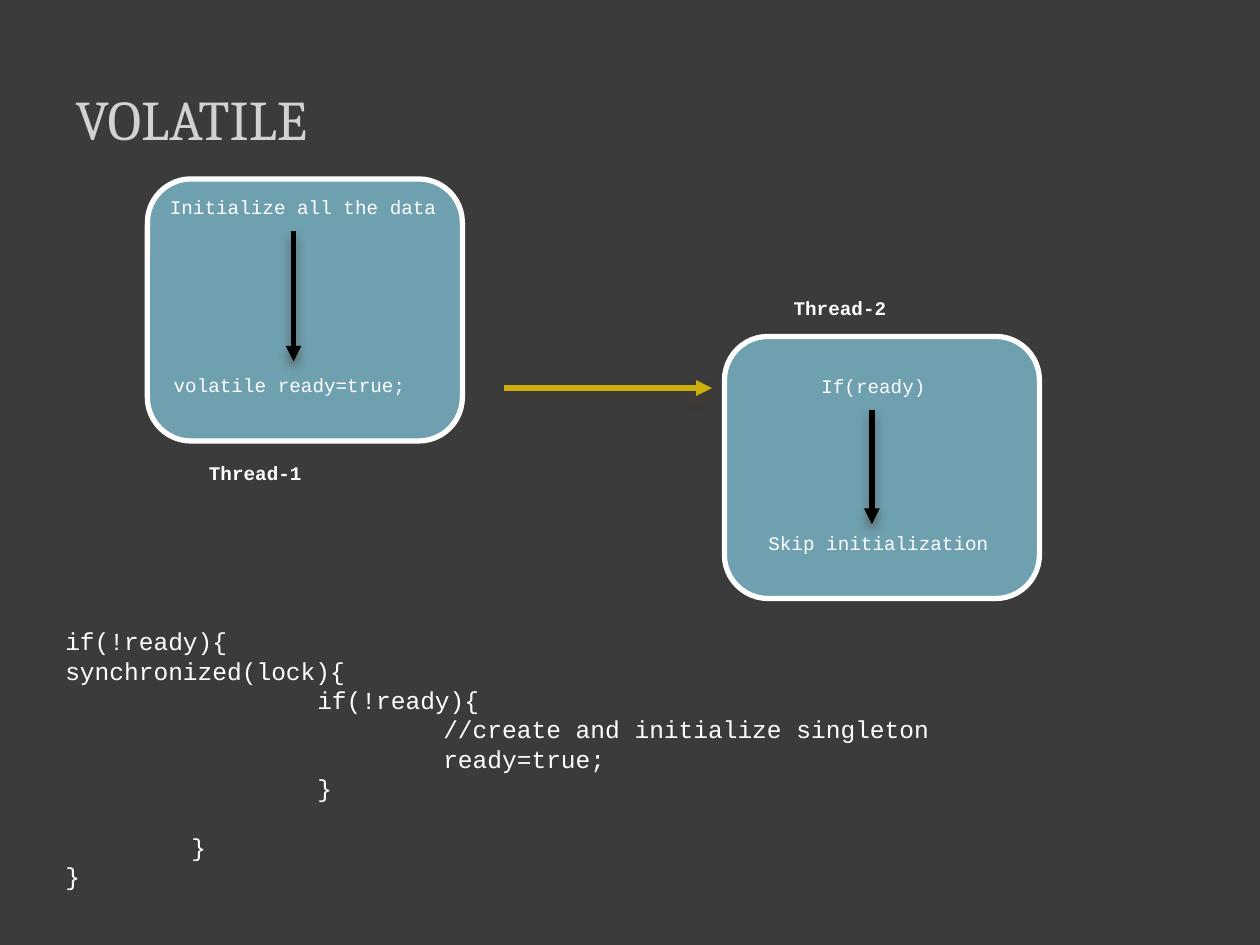
"""Build the slide on publishing data between threads with a volatile flag."""
from lxml import etree
from pptx import Presentation
from pptx import util as u
from pptx.dml.color import RGBColor
from pptx.enum import shapes, text
from pptx.oxml import parse_xml
from pptx.oxml.ns import nsdecls, qn

COLORS = {
    "background": "3B3B3B",
    "thread": "6EA0B0",
    "white": "FFFFFF",
    "title": "D4D2D0",
    "signal": "CCAF0A",
    "step": "000000",
    "shadow": "4E3B30",
}
CODE = [
    "if(!ready){",
    "synchronized(lock){",
    "\t\tif(!ready){",
    "\t\t\t//create and initialize singleton",
    "\t\t\tready=true;",
    "\t\t}",
    "\t}",
    "}",
]
LABELS = [
    ("volatile ready=true;", (1.28, 2.91, 3.1, 0.33), False),
    ("If(ready)", (6.42, 2.92, 1.47, 0.33), False),
    ("Initialize all the data", (1.25, 1.5, 2.34, 0.57), False),
    ("Skip initialization", (6, 4.17, 2.34, 0.57), False),
    ("Thread-1", (1.56, 3.61, 1.31, 0.37), True),
    ("Thread-2", (6.2, 2.3, 1.31, 0.37), True),
]


def rgb(name):
    return RGBColor.from_string(COLORS[name])


def inches(values):
    return [u.Inches(value) for value in values]


def write(paragraph, words, size=11, font="Courier New", color="white",
          bold=False, after=0, before=0):
    paragraph.alignment = text.PP_ALIGN.LEFT
    paragraph.space_before = u.Pt(before)
    paragraph.space_after = u.Pt(after)
    run = paragraph.add_run()
    run.text = words
    run.font.size = u.Pt(size)
    run.font.name = font
    run.font.bold = bold
    run.font.color.rgb = rgb(color)


def add_title(slide, words):
    title = slide.shapes.title
    title.left, title.top, title.width, title.height = inches((0.5, 0.25, 9, 1.37))
    title.text_frame.vertical_anchor = text.MSO_ANCHOR.MIDDLE
    write(title.text_frame.paragraphs[0], words, size=32, font="Cambria", color="title")


def add_thread(slide, left, top):
    thread = slide.shapes.add_shape(
        shapes.MSO_SHAPE.ROUNDED_RECTANGLE, *inches((left, top, 2.5, 2.08)))
    thread.shadow.inherit = False
    thread.fill.solid()
    thread.fill.fore_color.rgb = rgb("thread")
    thread.line.color.rgb = rgb("white")
    thread.line.width = u.Pt(3)


def add_arrow(slide, start, end, color):
    arrow = slide.shapes.add_connector(
        shapes.MSO_CONNECTOR.STRAIGHT, *inches(start + end))
    arrow.line.color.rgb = rgb(color)
    arrow.line.width = u.Pt(3)
    etree.SubElement(arrow.line._get_or_add_ln(), qn("a:tailEnd"), type="triangle")
    arrow._element.spPr.append(parse_xml(
        f'<a:effectLst {nsdecls("a")}>'
        f'<a:outerShdw blurRad="{u.Pt(6)}" dist="{u.Pt(4)}" dir="5400000" rotWithShape="0">'
        f'<a:srgbClr val="{COLORS["shadow"]}"><a:alpha val="60000"/></a:srgbClr>'
        '</a:outerShdw></a:effectLst>'))


def add_frame(slide, bounds):
    frame = slide.shapes.add_textbox(*inches(bounds)).text_frame
    frame.word_wrap = True
    return frame


def add_label(slide, words, bounds, bold):
    write(add_frame(slide, bounds).paragraphs[0], words, bold=bold, after=10)


def add_code(slide, lines, bounds):
    frame = add_frame(slide, bounds)
    for index, line in enumerate(lines):
        paragraph = frame.add_paragraph() if index else frame.paragraphs[0]
        paragraph._p.get_or_add_pPr().set("defTabSz", str(u.Inches(1)))
        write(paragraph, line, size=14, before=16.8 if line == "\t}" else 0)


def main():
    deck = Presentation()
    deck.slide_width, deck.slide_height = inches((10, 7.5))
    slide = deck.slides.add_slide(deck.slide_layouts[5])
    slide.background.fill.solid()
    slide.background.fill.fore_color.rgb = rgb("background")

    add_title(slide, "VOLATILE")
    add_thread(slide, 5.75, 2.67)
    add_thread(slide, 1.17, 1.42)
    add_arrow(slide, (4, 3.08), (5.65, 3.08), "signal")
    add_arrow(slide, (2.33, 1.83), (2.33, 2.87), "step")
    add_arrow(slide, (6.92, 3.25), (6.92, 4.16), "step")
    for words, bounds, bold in LABELS:
        add_label(slide, words, bounds, bold)
    add_code(slide, CODE, (0.42, 4.92, 8.83, 2.22))
    deck.save("out.pptx")


if __name__ == "__main__":
    main()
